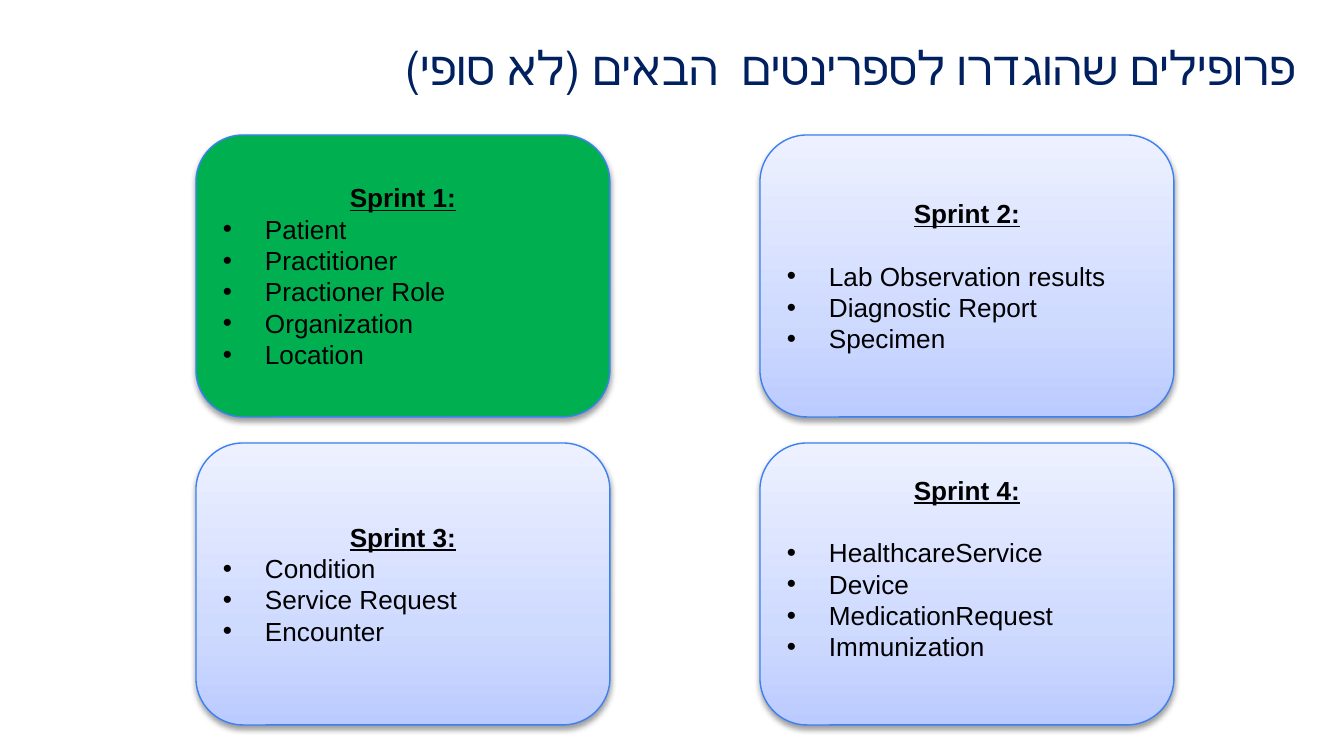
"""Build the slide of FHIR profiles planned for the coming sprints."""
from lxml.etree import SubElement
from pptx import Presentation
from pptx.dml.color import RGBColor
from pptx.enum.shapes import MSO_SHAPE
from pptx.enum.text import MSO_ANCHOR, MSO_AUTO_SIZE, PP_ALIGN
from pptx.oxml import parse_xml
from pptx.oxml.ns import nsdecls, qn
from pptx.util import Pt

TITLE = "פרופילים שהוגדרו לספרינטים  הבאים (לא סופי)"
SPRINTS = [
    {"name": "Sprint 1:", "done": True, "gap": 0, "foot": 0,
     "items": ["Patient", "Practitioner", "Practioner Role", "Organization", "Location"]},
    {"name": "Sprint 2:", "done": False, "gap": 1, "foot": 0,
     "items": ["Lab Observation results", "Diagnostic Report", "Specimen"]},
    {"name": "Sprint 3:", "done": False, "gap": 0, "foot": 0,
     "items": ["Condition", "Service Request", "Encounter"]},
    {"name": "Sprint 4:", "done": False, "gap": 1, "foot": 1,
     "items": ["HealthcareService", "Device", "MedicationRequest", "Immunization"]},
]

NAVY = RGBColor(0x00, 0x20, 0x60)
GREEN = RGBColor(0x00, 0xB0, 0x50)
BLUE = RGBColor(0x3C, 0x81, 0xF3)
BLACK = RGBColor(0x00, 0x00, 0x00)
STOPS = [(0, RGBColor(0xBB, 0xCB, 0xFF)), (35, RGBColor(0xCF, 0xDA, 0xFF)),
         (100, RGBColor(0xED, 0xF1, 0xFF))]

FONT = "Arial"
LEFT, TOP, CARD_W, CARD_H = 196, 135, 414, 282
STEP_X, STEP_Y, COLUMNS = 564, 308, 2
INSET, INDENT = 13, 42
LINE = Pt(16.8)


def px(n):
    return round(n * 914400 / 134.4)


def add_gradient(sp):
    stops = "".join(f'<a:gs pos="{pos * 1000}"><a:srgbClr val="{color}"/></a:gs>'
                    for pos, color in STOPS)
    sp._element.spPr.find(qn("a:prstGeom")).addnext(parse_xml(
        f'<a:gradFill {nsdecls("a")} rotWithShape="1"><a:gsLst>{stops}</a:gsLst>'
        '<a:lin ang="16200000" scaled="0"/></a:gradFill>'))


def add_shadow(sp):
    sp.shadow.inherit = False
    effects = sp._element.spPr.find(qn("a:effectLst"))
    effects.append(parse_xml(
        f'<a:outerShdw {nsdecls("a")} blurRad="{Pt(3.1)}" dist="{Pt(1.6)}" dir="5400000" '
        f'rotWithShape="0"><a:srgbClr val="{BLACK}"><a:alpha val="38000"/></a:srgbClr>'
        '</a:outerShdw>'))


def add_bullet(p):
    pPr = p._p.get_or_add_pPr()
    pPr.set("marL", str(px(INDENT)))
    pPr.set("indent", str(-px(INDENT)))
    SubElement(SubElement(pPr, qn("a:buClr")), qn("a:srgbClr")).set("val", str(BLACK))
    SubElement(pPr, qn("a:buFont")).set("typeface", FONT)
    SubElement(pPr, qn("a:buChar")).set("char", "•")


def add_run(p, text, size, color, heading=False):
    r = p.add_run()
    r.text = text
    r.font.name, r.font.size = FONT, Pt(size)
    r.font.color.rgb = color
    r.font.bold = r.font.underline = heading


def add_title(s):
    sp = s.shapes.title
    sp.left, sp.top, sp.width, sp.height = px(56), px(24), px(1253), px(85)
    tf = sp.text_frame
    tf.margin_left = tf.margin_right = tf.margin_top = tf.margin_bottom = px(INSET)
    tf.vertical_anchor = MSO_ANCHOR.MIDDLE
    tf.auto_size = MSO_AUTO_SIZE.NONE
    p = tf.paragraphs[0]
    p.alignment = PP_ALIGN.RIGHT
    p._p.get_or_add_pPr().set("rtl", "1")
    add_run(p, TITLE, 25.2, NAVY)


def add_card(s, index, sprint):
    row, column = divmod(index, COLUMNS)
    sp = s.shapes.add_shape(MSO_SHAPE.ROUNDED_RECTANGLE, px(LEFT + column * STEP_X),
                            px(TOP + row * STEP_Y), px(CARD_W), px(CARD_H))
    if sprint["done"]:
        sp.fill.solid()
        sp.fill.fore_color.rgb = GREEN
    else:
        add_gradient(sp)
    sp.line.color.rgb, sp.line.width = BLUE, Pt(0.75)
    add_shadow(sp)
    tf = sp.text_frame
    tf.word_wrap, tf.vertical_anchor = True, MSO_ANCHOR.MIDDLE
    tf.margin_bottom = px(7) + sprint["foot"] * LINE
    p = tf.paragraphs[0]
    p.alignment, p.line_spacing = PP_ALIGN.CENTER, LINE
    p.space_after = sprint["gap"] * LINE
    add_run(p, sprint["name"], 14, BLACK, heading=True)
    for item in sprint["items"]:
        p = tf.add_paragraph()
        p.alignment, p.line_spacing = PP_ALIGN.LEFT, LINE
        add_bullet(p)
        add_run(p, item, 14, BLACK)


def main():
    prs = Presentation()
    prs.slide_width, prs.slide_height = px(1344), px(756)
    s = prs.slides.add_slide(prs.slide_layouts[5])
    add_title(s)
    for index, sprint in enumerate(SPRINTS):
        add_card(s, index, sprint)
    prs.save("out.pptx")


if __name__ == "__main__":
    main()
